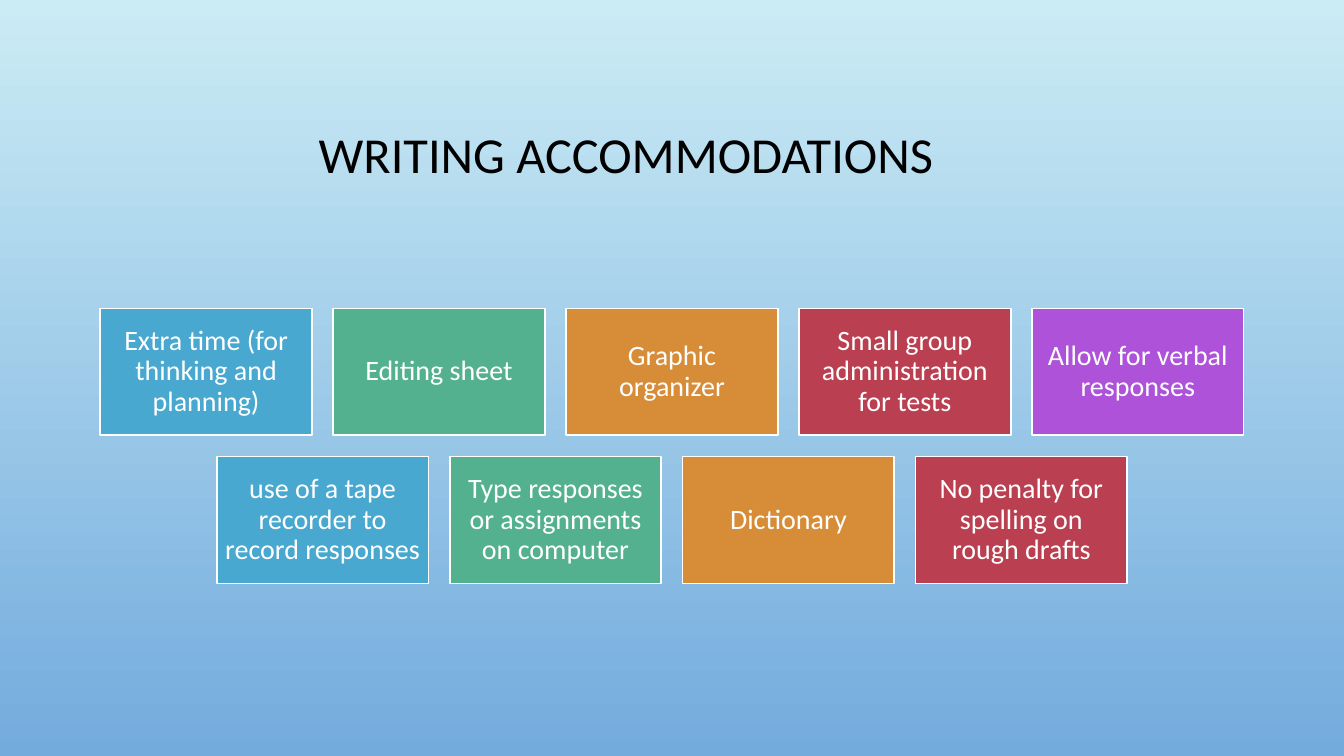
from pptx import Presentation
from pptx.dml.color import RGBColor
from pptx.enum.shapes import MSO_SHAPE
from pptx.enum.text import MSO_ANCHOR, MSO_AUTO_SIZE, PP_ALIGN
from pptx.util import Inches, Pt

SLIDE_WIDTH, SLIDE_HEIGHT = 13.33, 7.5
CARD_WIDTH, CARD_HEIGHT, GAP = 2.1, 1.26, 0.21
FIRST_ROW_TOP = 3.06
CARD_COLOURS = ["48A8D0", "53B18F", "D78D38", "BA3F51", "AE52D9"]
ACCOMMODATION_ROWS = [
    ["Extra time (for thinking and planning)", "Editing sheet", "Graphic organizer",
     "Small group administration for tests", "Allow for verbal responses"],
    ["use of a tape recorder to record responses",
     "Type responses or assignments on computer", "Dictionary",
     "No penalty for spelling on rough drafts"],
]


def colour(hex_code):
    return RGBColor.from_string(hex_code)


class SlideBuilder:
    font_name = "Calibri"

    def __init__(self, slide):
        self.slide = slide

    def background(self, top_colour, bottom_colour):
        fill = self.slide.background.fill
        fill.gradient()
        fill.gradient_angle = 270
        for stop, hex_code in zip(fill.gradient_stops, (top_colour, bottom_colour)):
            stop.color.rgb = colour(hex_code)

    def centred_text(self, frame, text, size, hex_code):
        frame.text = text
        frame.word_wrap = True
        frame.auto_size = MSO_AUTO_SIZE.NONE
        frame.vertical_anchor = MSO_ANCHOR.MIDDLE
        paragraph = frame.paragraphs[0]
        paragraph.alignment = PP_ALIGN.CENTER
        paragraph.line_spacing = 0.9
        font = paragraph.runs[0].font
        font.name = self.font_name
        font.size = Pt(size)
        font.color.rgb = colour(hex_code)

    def title(self, text):
        heading = self.slide.shapes.title
        heading.left, heading.top = Inches(1), Inches(0.68)
        heading.width, heading.height = Inches(11.33), Inches(1.75)
        self.centred_text(heading.text_frame, text, 36, "000000")
        # The heading sits left of centre
        heading.text_frame.margin_right = Inches(1.01)

    def card(self, text, left, top, fill_colour):
        card = self.slide.shapes.add_shape(
            MSO_SHAPE.RECTANGLE, Inches(left), Inches(top),
            Inches(CARD_WIDTH), Inches(CARD_HEIGHT))
        card.shadow.inherit = False
        card.fill.solid()
        card.fill.fore_color.rgb = colour(fill_colour)
        card.line.color.rgb = colour("FFFFFF")
        card.line.width = Pt(1.25)
        frame = card.text_frame
        frame.margin_left = frame.margin_right = Inches(0.08)
        frame.margin_top = frame.margin_bottom = Inches(0.08)
        self.centred_text(frame, text, 20, "FFFFFF")


def main():
    presentation = Presentation()
    presentation.slide_width = Inches(SLIDE_WIDTH)
    presentation.slide_height = Inches(SLIDE_HEIGHT)
    title_only = presentation.slide_layouts[5]
    builder = SlideBuilder(presentation.slides.add_slide(title_only))

    # Background and heading
    builder.background("CBECF5", "73ABDD")
    builder.title("WRITING ACCOMMODATIONS")

    # Rows of cards, each centred on the slide
    for row, accommodations in enumerate(ACCOMMODATION_ROWS):
        row_width = len(accommodations) * (CARD_WIDTH + GAP) - GAP
        row_left = (SLIDE_WIDTH - row_width) / 2
        top = FIRST_ROW_TOP + row * (CARD_HEIGHT + GAP)
        for column, (text, fill_colour) in enumerate(zip(accommodations, CARD_COLOURS)):
            builder.card(text, row_left + column * (CARD_WIDTH + GAP), top, fill_colour)

    presentation.save("out.pptx")


if __name__ == "__main__":
    main()
